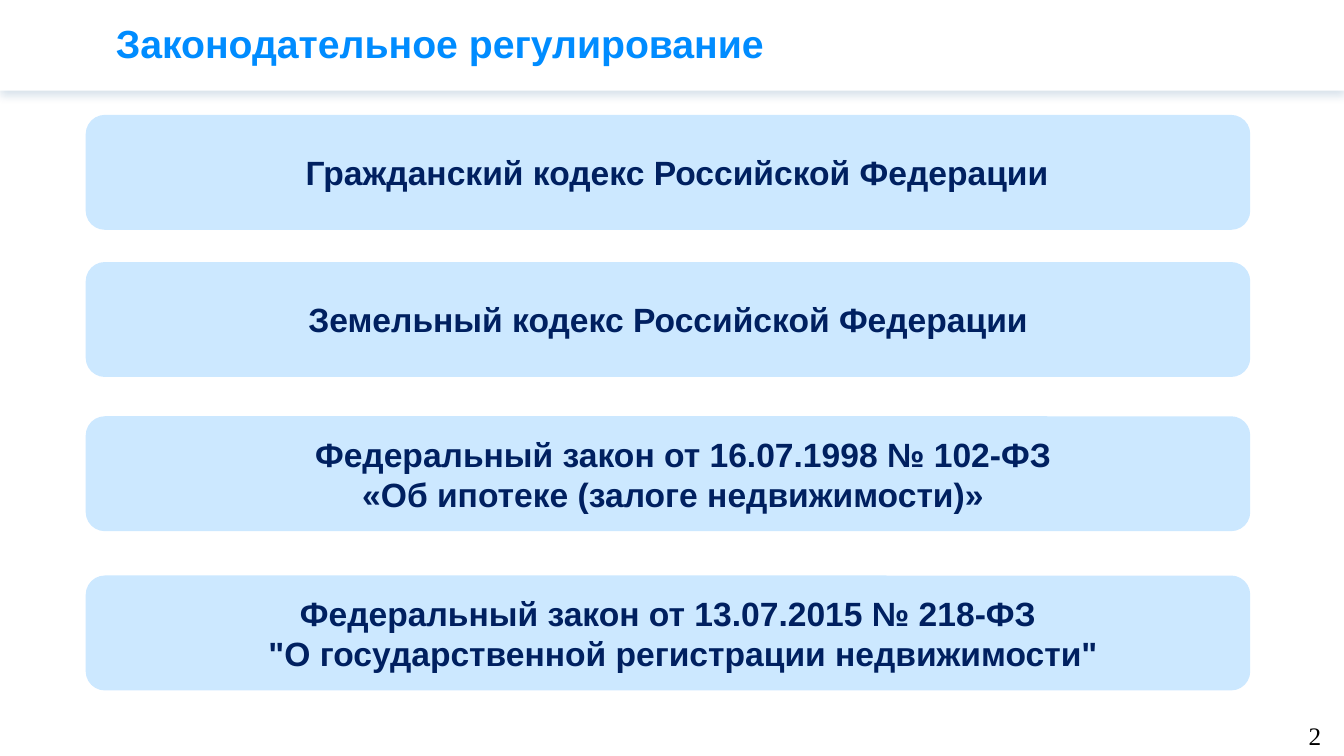
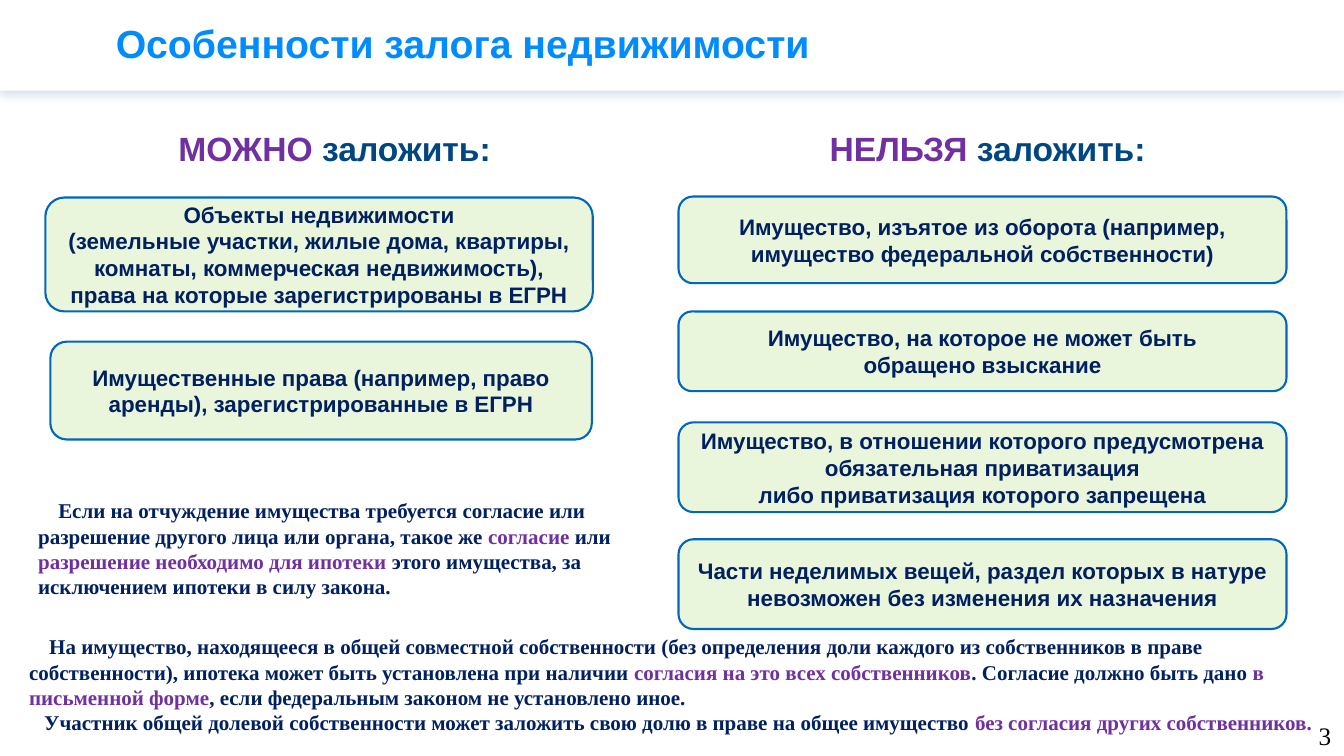
"""Build two slides on mortgage law and the pledge of real estate."""
from pptx import Presentation
from pptx import util as u
from pptx.dml.color import RGBColor
from pptx.enum import shapes, text
from pptx.oxml import parse_xml
from pptx.oxml.ns import nsdecls

Inches = u.Inches
SANS, SERIF = "Arial", "Times New Roman"
WHITE, BLACK, NAVY, TITLE_BLUE = "FFFFFF", "000000", "002060", "008CFF"
PALE_BLUE, PALE_GREEN, BORDER = "CCE8FF", "E9F6DC", "0067BC"
PURPLE, DEEP_BLUE = "7030A0", "004680"
CENTER, LEFT = text.PP_ALIGN.CENTER, text.PP_ALIGN.LEFT
MIDDLE, TOP = text.MSO_ANCHOR.MIDDLE, text.MSO_ANCHOR.TOP


def color(value):
    """Turn a hex string into a colour."""
    return RGBColor.from_string(value)


def write(shape, paragraphs, size, ink=NAVY, font=SANS, bold=True,
          align=LEFT, anchor=MIDDLE, margins=(), indents=(), spacing=None):
    """Fill a shape with paragraphs, each a string or a list of (text, colour) runs."""
    frame = shape.text_frame
    frame.word_wrap = True
    frame.vertical_anchor = anchor
    for index, runs in enumerate(paragraphs):
        paragraph = frame.paragraphs[0] if index == 0 else frame.add_paragraph()
        paragraph.alignment = align
        if spacing:
            paragraph.line_spacing = spacing
        properties = paragraph._p.get_or_add_pPr()
        if margins:
            properties.set("marL", str(Inches(margins[index])))
        if indents:
            properties.set("indent", str(Inches(indents[index])))
        paragraph.font.size = u.Pt(size)
        paragraph.font.name = font
        paragraph.font.bold = bold
        paragraph.font.color.rgb = color(ink)
        for words, run_ink in [(runs, ink)] if isinstance(runs, str) else runs:
            run = paragraph.add_run()
            run.text = words
            if run_ink != ink:
                run.font.color.rgb = color(run_ink)


def add_text(slide, box, paragraphs, size, **style):
    """Add a text box."""
    shape = slide.shapes.add_textbox(*map(Inches, box))
    write(shape, paragraphs, size, **style)


def add_block(slide, kind, box, fill, border=None):
    """Add a filled shape without a shadow."""
    shape = slide.shapes.add_shape(kind, *map(Inches, box))
    shape.shadow.inherit = False
    shape.fill.solid()
    shape.fill.fore_color.rgb = color(fill)
    if border:
        shape.line.color.rgb = color(border)
        shape.line.width = u.Pt(1.5)
    else:
        shape.line.fill.background()
    return shape


def add_card(slide, box, paragraphs, size, fill, border=None, margins=()):
    """Add a rounded card with centred bold text."""
    shape = add_block(slide, shapes.MSO_SHAPE.ROUNDED_RECTANGLE, box, fill, border)
    write(shape, paragraphs, size, align=CENTER, margins=margins)


def add_header_band(slide):
    """Add the white band with a soft shadow below it."""
    band = add_block(slide, shapes.MSO_SHAPE.RECTANGLE, (0, 0, 13.33, 0.9), WHITE)
    effects = band._element.spPr.find("{*}effectLst")
    effects.append(parse_xml(
        f'<a:outerShdw {nsdecls("a")} blurRad="{u.Pt(6)}" dist="{u.Pt(3)}" '
        f'dir="5400000" algn="t" rotWithShape="0"><a:srgbClr val="{DEEP_BLUE}">'
        '<a:alpha val="15000"/></a:srgbClr></a:outerShdw>'))


def add_slide(presentation, title, number, number_left):
    """Add a slide with its header band, title and page number."""
    slide = presentation.slides.add_slide(presentation.slide_layouts[6])
    add_header_band(slide)
    add_text(slide, (1.05, 0, 11.52, 0.91), [title], 28, ink=TITLE_BLUE, spacing=0.9)
    add_text(slide, (number_left, 7.1, 13.33 - number_left, 0.4), [number], 18,
             ink=BLACK, font=SERIF, bold=False)
    return slide


def add_column(slide, heading_box, verb, cards):
    """Add a heading with its column of bordered cards."""
    add_text(slide, heading_box, [[(verb, PURPLE), (" заложить:", DEEP_BLUE)]], 24,
             ink=DEEP_BLUE, anchor=TOP)
    for box, paragraphs in cards:
        add_card(slide, box, paragraphs, 16, PALE_GREEN, BORDER)


def build_legislation(presentation):
    """Build the slide that lists the laws."""
    slide = add_slide(presentation, "Законодательное регулирование", "2", 12.88)
    laws = [
        (1.14, ["Гражданский кодекс Российской Федерации"], [0.18]),
        (2.6, ["Земельный кодекс Российской Федерации"], [0]),
        (4.13, ["Федеральный закон от 16.07.1998 № 102-ФЗ",
                "«Об ипотеке (залоге\u00a0недвижимости)»"], [0.3, 0.1]),
        (5.71, ["Федеральный закон от 13.07.2015 № 218-ФЗ",
                "\"О государственной регистрации недвижимости\""], [0, 0.3]),
    ]
    for top, paragraphs, margins in laws:
        add_card(slide, (0.85, top, 11.55, 1.14), paragraphs, 24, PALE_BLUE,
                 margins=margins)


def build_pledge(presentation):
    """Build the slide on what can and cannot be pledged."""
    slide = add_slide(presentation, "Особенности залога недвижимости", "3", 12.98)
    add_column(slide, (1.67, 1.22, 3.43, 0.5), "МОЖНО", [
        ((0.45, 1.96, 5.43, 1.13), [
            "Объекты недвижимости",
            "(земельные участки, жилые дома, квартиры, комнаты, коммерческая "
            "недвижимость), права на которые зарегистрированы в ЕГРН"]),
        ((0.5, 3.39, 5.37, 0.97), [
            "Имущественные права (например, право аренды), зарегистрированные в ЕГРН"]),
    ])
    forbidden = [
        (1.95, 0.86, ["Имущество, изъятое из оборота (например, "
                      "имущество федеральной собственности)"]),
        (3.09, 0.79, ["Имущество, на которое не может быть", "обращено взыскание"]),
        (4.19, 0.89, ["Имущество, в отношении которого предусмотрена "
                      "обязательная приватизация",
                      "либо приватизация которого запрещена"]),
        (5.35, 0.89, ["Части неделимых вещей, раздел которых в натуре "
                      "невозможен без изменения их назначения"]),
    ]
    add_column(slide, (8.13, 1.22, 3.53, 0.5), "НЕЛЬЗЯ", [
        ((6.73, top, 6.03, height), paragraphs)
        for top, height, paragraphs in forbidden])
    add_text(slide, (0.19, 6.24, 12.97, 1.1), [
        [("На имущество, находящееся в общей совместной собственности (без определения "
          "доли каждого из собственников в праве собственности), ипотека может быть "
          "установлена при наличии ", NAVY),
         ("согласия на это всех собственников", PURPLE),
         (". Согласие должно быть дано ", NAVY),
         ("в письменной форме", PURPLE),
         (", если федеральным законом не установлено иное.", NAVY)],
        [("Участник общей долевой собственности может заложить свою долю в праве "
          "на общее имущество ", NAVY),
         ("без согласия других собственников.", PURPLE)],
    ], 15, font=SERIF, anchor=TOP, margins=(0, 0), indents=(0.2, 0.15))
    add_text(slide, (0.28, 4.89, 6.6, 1.23), [
        [("Если на отчуждение имущества требуется согласие или разрешение другого "
          "лица или органа, такое же ", NAVY),
         ("согласие", PURPLE),
         (" или ", NAVY),
         ("разрешение необходимо для ипотеки", PURPLE),
         (" этого имущества, за исключением ипотеки в силу закона.", NAVY)],
    ], 15, font=SERIF, anchor=TOP, margins=(0,), indents=(0.2,))


def main():
    """Build and save the presentation."""
    presentation = Presentation()
    presentation.slide_width = Inches(13.33)
    presentation.slide_height = Inches(7.5)
    build_legislation(presentation)
    build_pledge(presentation)
    presentation.save("out.pptx")


if __name__ == "__main__":
    main()
